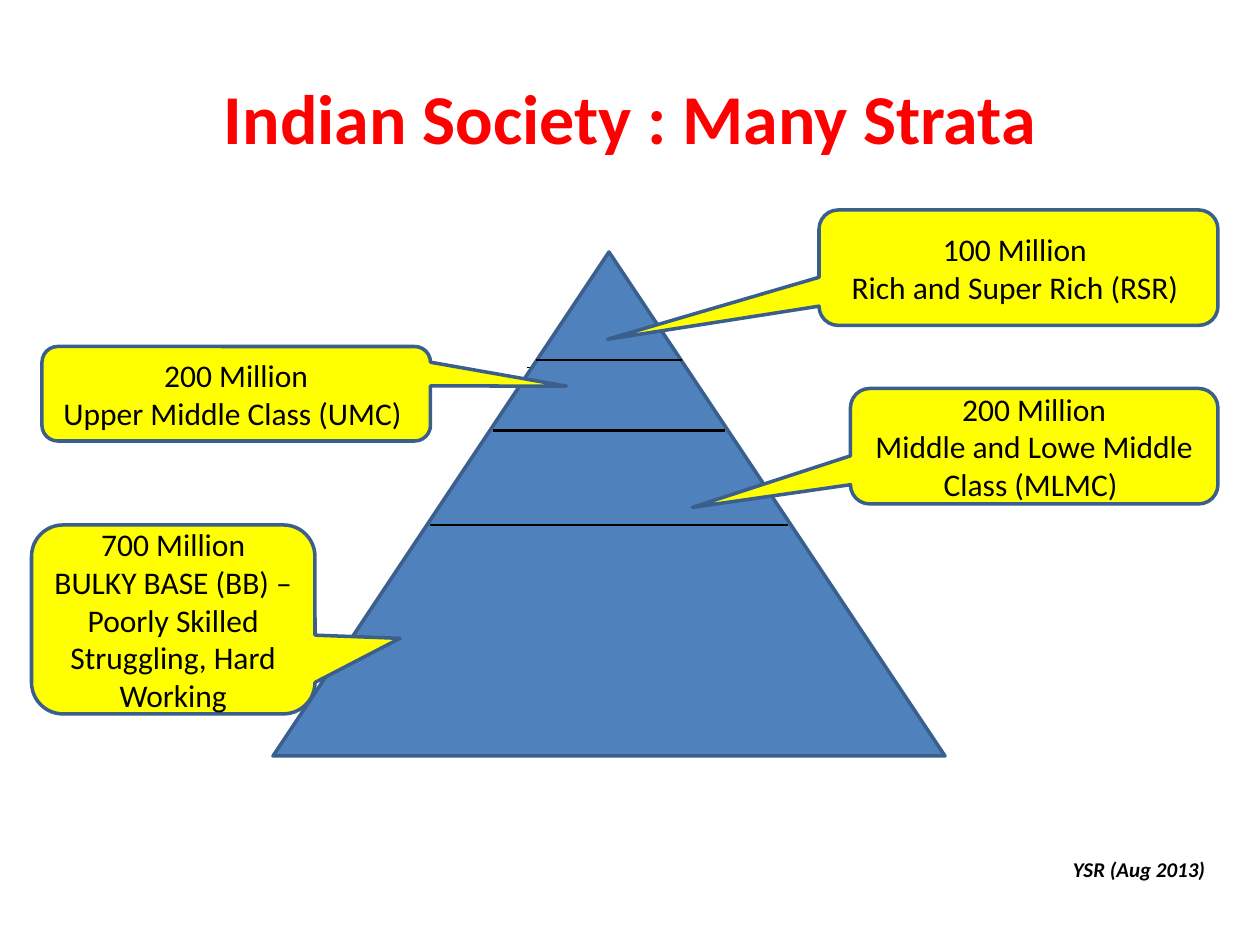
import pptx
import pptx.dml.color
import pptx.enum.shapes
import pptx.enum.text
import pptx.oxml
import pptx.util

RED = pptx.dml.color.RGBColor(0xFF, 0x00, 0x00)
BLACK = pptx.dml.color.RGBColor(0x00, 0x00, 0x00)
BLUE = pptx.dml.color.RGBColor(0x4F, 0x81, 0xBD)
EDGE = pptx.dml.color.RGBColor(0x3A, 0x5F, 0x8C)
YELLOW = pptx.dml.color.RGBColor(0xFF, 0xFF, 0x00)

COLUMNS, ROWS = 120, 90
BACK_DIVIDERS = [(50.2, 65.3, 35, 35), (46.4, 69.8, 41.6, 42), (40, 76, 51, 51)]
DIVIDERS = [(51, 65, 34.3, 34.3), (47, 69, 41, 41), (41, 75, 50, 50)]
STRATA = [
    ((78, 20, 38, 11), (-1.03, 0.62), ["100 Million ", "Rich and Super Rich (RSR) "]),
    ((81, 37, 35, 11), (-0.93, 0.53),
     ["200 Million", "Middle and Lowe Middle Class (MLMC) "]),
    ((4, 33, 37, 9), (0.85, -0.08), ["200 Million", "Upper Middle Class (UMC) "]),
    ((3, 50, 27, 18), (0.8, 0.1),
     ["700 Million", "BULKY BASE (BB) – Poorly Skilled Struggling, Hard Working"]),
]


class StrataSlide:
    font = "Calibri"
    edge_width = 2

    def __init__(self, deck):
        self.column = deck.slide_width / COLUMNS
        self.row = deck.slide_height / ROWS
        self.slide = deck.slides.add_slide(deck.slide_layouts[5])
        self.shapes = self.slide.shapes

    def place(self, left, top, width, height):
        return (round(left * self.column), round(top * self.row),
                round(width * self.column), round(height * self.row))

    def set_text(self, frame, lines, size, color=BLACK, bold=False, italic=False,
                 align=pptx.enum.text.PP_ALIGN.CENTER,
                 anchor=pptx.enum.text.MSO_ANCHOR.MIDDLE):
        frame.word_wrap = True
        frame.vertical_anchor = anchor
        for number, line in enumerate(lines):
            paragraph = frame.add_paragraph() if number else frame.paragraphs[0]
            paragraph.alignment = align
            run = paragraph.add_run()
            run.text = line
            run.font.name = self.font
            run.font.size = pptx.util.Pt(size)
            run.font.bold = bold
            run.font.italic = italic
            run.font.color.rgb = color

    def title(self, cells, wording):
        heading = self.shapes.title
        heading.left, heading.top, heading.width, heading.height = self.place(*cells)
        self.set_text(heading.text_frame, [wording], 40, RED, bold=True)

    def note(self, cells, wording):
        credit = self.shapes.add_textbox(*self.place(*cells))
        self.set_text(credit.text_frame, [wording], 12, bold=True, italic=True,
                      align=pptx.enum.text.PP_ALIGN.LEFT,
                      anchor=pptx.enum.text.MSO_ANCHOR.TOP)
        credit.text_frame.auto_size = pptx.enum.text.MSO_AUTO_SIZE.SHAPE_TO_FIT_TEXT

    def outlined(self, kind, cells, fill):
        figure = self.shapes.add_shape(kind, *self.place(*cells))
        figure.shadow.inherit = False
        figure.fill.solid()
        figure.fill.fore_color.rgb = fill
        figure.line.color.rgb = EDGE
        figure.line.width = pptx.util.Pt(self.edge_width)
        return figure

    def pyramid(self, cells):
        self.outlined(pptx.enum.shapes.MSO_SHAPE.ISOSCELES_TRIANGLE, cells, BLUE)

    def callout(self, cells, pointer, lines):
        stratum = self.outlined(
            pptx.enum.shapes.MSO_SHAPE.ROUNDED_RECTANGULAR_CALLOUT, cells, YELLOW)
        stratum.adjustments[0], stratum.adjustments[1] = pointer
        self.set_text(stratum.text_frame, lines, 18)

    def divider(self, start, end, start_row, end_row, width):
        begin_x, begin_y, end_x, end_y = self.place(start, start_row, end, end_row)
        border = self.shapes.add_connector(
            pptx.enum.shapes.MSO_CONNECTOR.STRAIGHT, begin_x, begin_y, end_x, end_y)
        border.line.color.rgb = BLACK
        border.line.width = pptx.util.Pt(width)
        properties = border.element.spPr
        properties.append(pptx.oxml.parse_xml(
            '<a:effectLst xmlns:a="http://schemas.openxmlformats.org/drawingml/2006/main"/>'))


def main():
    deck = pptx.Presentation()
    deck.slide_width = pptx.util.Inches(10)
    deck.slide_height = pptx.util.Inches(7.5)

    society = StrataSlide(deck)
    society.title((6, 3.6, 108, 15), "Indian Society : Many Strata")
    for ends in BACK_DIVIDERS:
        society.divider(*ends, width=0.75)
    society.pyramid((26, 24, 64, 48))
    society.note((101, 81, 17, 3.6), "YSR (Aug 2013)")
    for cells, pointer, lines in STRATA:
        society.callout(cells, pointer, lines)
    for ends in DIVIDERS:
        society.divider(*ends, width=1.25)

    deck.save("out.pptx")


if __name__ == "__main__":
    main()
